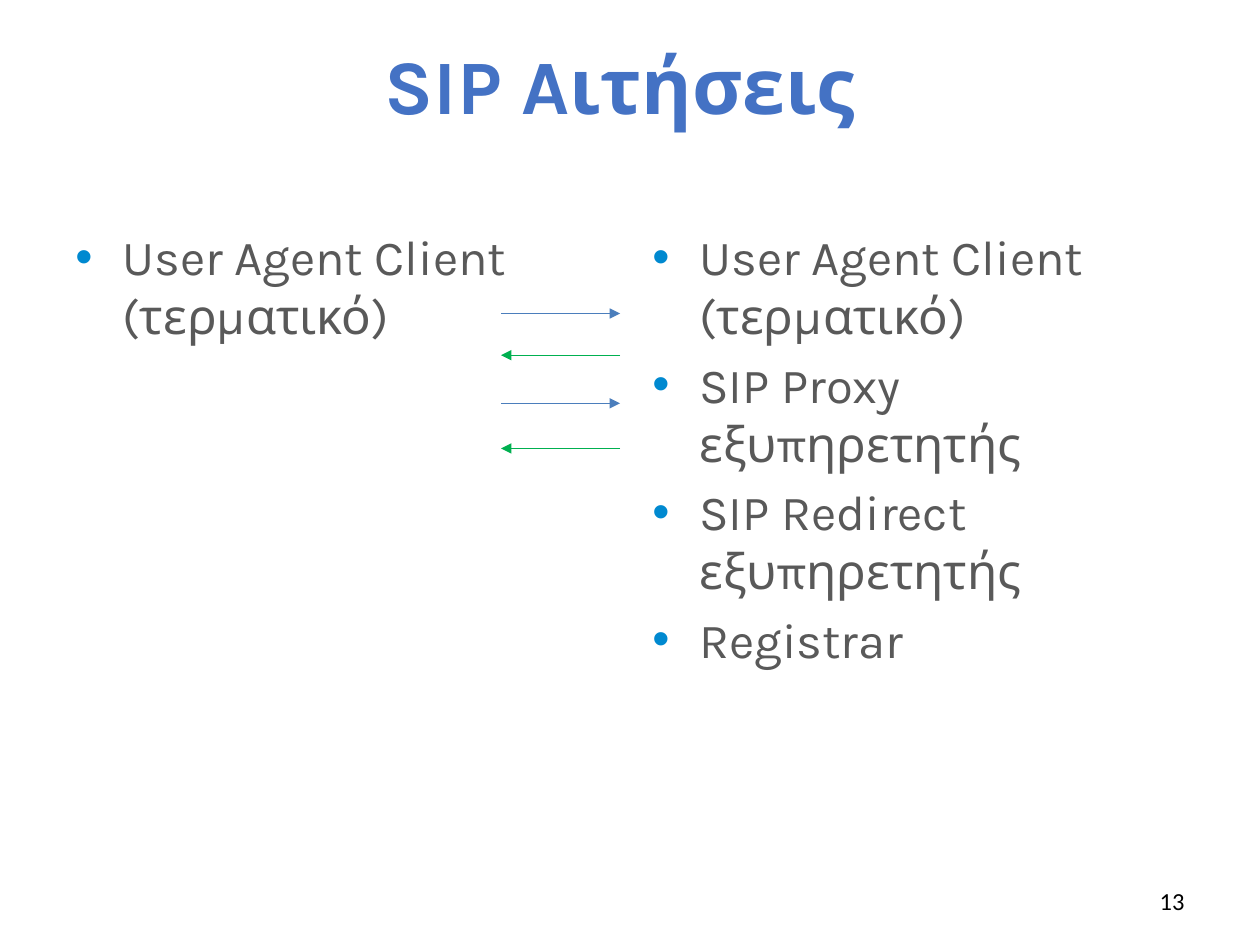
"""Builds the slide on SIP requests between a client and its servers."""
from lxml import etree
from pptx import Presentation
from pptx import util as u
from pptx.dml.color import RGBColor
from pptx.enum import shapes, text
from pptx.oxml import ns

TITLE_BLUE = RGBColor(0x44, 0x72, 0xC4)
BODY_GREY = RGBColor(0x59, 0x59, 0x59)
BULLET_BLUE = RGBColor(0x00, 0x89, 0xD0)
REQUEST_BLUE = RGBColor(0x4B, 0x7E, 0xBC)
REPLY_GREEN = RGBColor(0x00, 0xB0, 0x50)
BLACK = RGBColor(0, 0, 0)

CLIENT = "User Agent Client (τερματικό)"
SERVERS = [CLIENT, "SIP Proxy εξυπηρετητής", "SIP Redirect εξυπηρετητής", "Registrar"]
ARROW_LEFT, ARROW_RIGHT = 10.1, 12.5
REQUEST_ROWS = (6.32, 8.13)
REPLY_ROWS = (7.16, 9.04)


def add_box(page, left, top, width, height, anchor):
    box = page.shapes.add_textbox(u.Cm(left), u.Cm(top), u.Cm(width), u.Cm(height))
    frame = box.text_frame
    frame.word_wrap = True
    frame.vertical_anchor = anchor
    return frame


def add_span(para, words, font, size, color, bold=False):
    span = para.add_run()
    span.text = words
    span.font.name = font
    span.font.size = u.Pt(size)
    span.font.bold = bold
    span.font.color.rgb = color


def add_line(page, words, place, align, font, size, color, bold=False):
    frame = add_box(page, *place, text.MSO_ANCHOR.MIDDLE)
    para = frame.paragraphs[0]
    para.alignment = align
    add_span(para, words, font, size, color, bold)
    return frame


def add_bullet(para):
    properties = para._p.get_or_add_pPr()
    properties.set("marL", str(u.Cm(0.95)))
    properties.set("indent", str(-u.Cm(0.95)))
    color = etree.SubElement(properties, ns.qn("a:buClr"))
    etree.SubElement(color, ns.qn("a:srgbClr"), val=str(BULLET_BLUE))
    etree.SubElement(properties, ns.qn("a:buFont"), typeface="Arial")
    etree.SubElement(properties, ns.qn("a:buChar"), char="•")


def add_list(page, left, items):
    frame = add_box(page, left, 4.45, 11.22, 12.57, text.MSO_ANCHOR.TOP)
    for index, item in enumerate(items):
        para = frame.paragraphs[0] if index == 0 else frame.add_paragraph()
        para.space_before = u.Pt(5.6)
        add_bullet(para)
        add_span(para, item, "Karla", 28, BODY_GREY)


def add_arrow(page, start, end, row, color):
    arrow = page.shapes.add_connector(
        shapes.MSO_CONNECTOR.STRAIGHT, u.Cm(start), u.Cm(row), u.Cm(end), u.Cm(row))
    arrow.line.color.rgb = color
    arrow.line.width = u.Pt(0.75)
    etree.SubElement(arrow.line._get_or_add_ln(), ns.qn("a:tailEnd"), type="triangle")
    etree.SubElement(arrow._element.spPr, ns.qn("a:effectLst"))


def main():
    deck = Presentation()
    deck.slide_width, deck.slide_height = u.Cm(25.4), u.Cm(19.05)
    page = deck.slides.add_slide(deck.slide_layouts[6])

    title = add_line(page, "SIP Aιτήσεις", (1.07, 0.94, 22.86, 3.18),
                     text.PP_ALIGN.CENTER, "Karla", 44, TITLE_BLUE, bold=True)
    title.margin_bottom = u.Cm(1.8)
    add_list(page, 1.27, [CLIENT])
    add_list(page, 12.9, SERVERS)
    add_line(page, "13", (18.2, 17.65, 5.93, 1.02),
             text.PP_ALIGN.RIGHT, "Calibri", 14, BLACK)

    for row in REQUEST_ROWS:
        add_arrow(page, ARROW_LEFT, ARROW_RIGHT, row, REQUEST_BLUE)
    for row in REPLY_ROWS:
        add_arrow(page, ARROW_RIGHT, ARROW_LEFT, row, REPLY_GREEN)

    deck.save("out.pptx")


if __name__ == "__main__":
    main()
